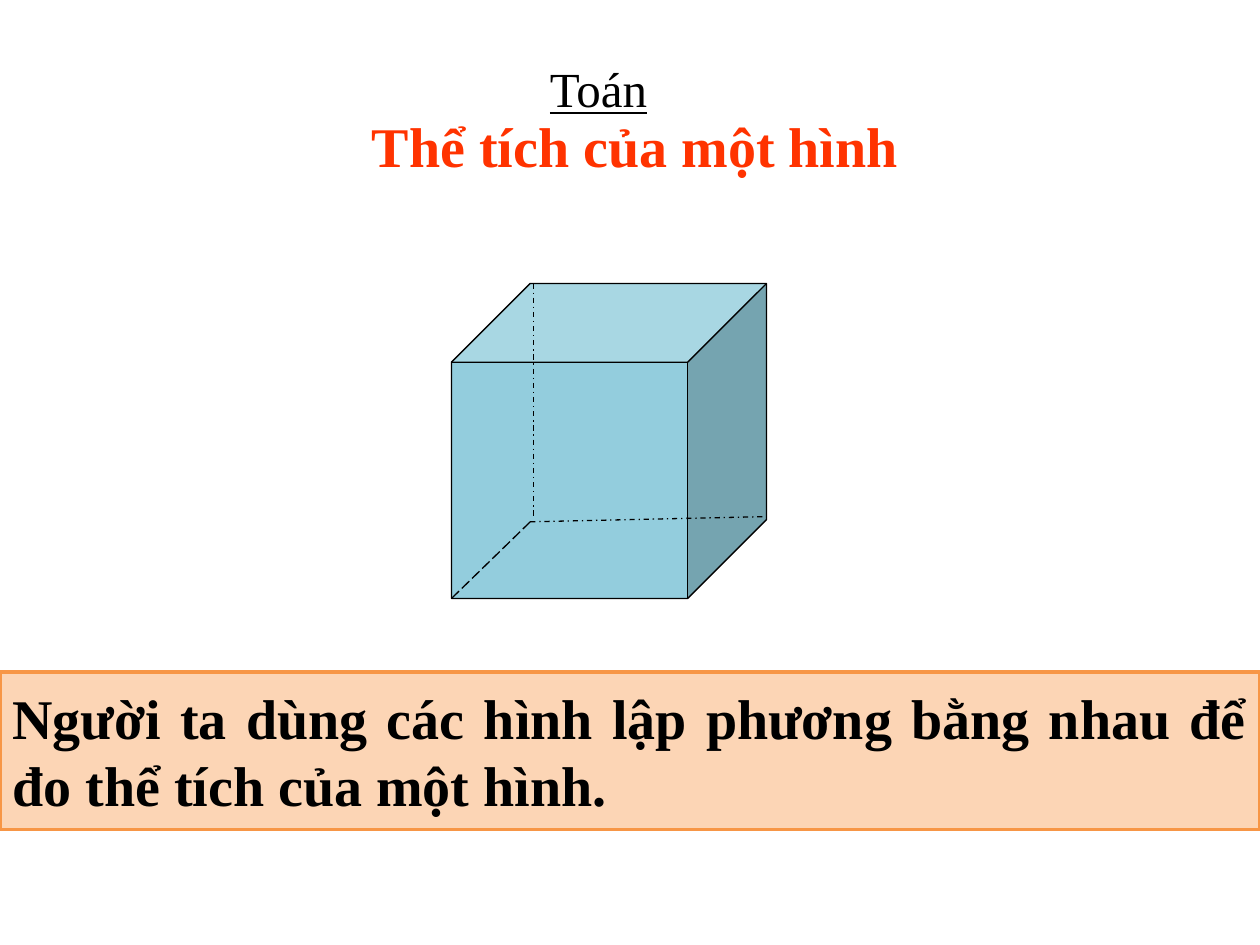
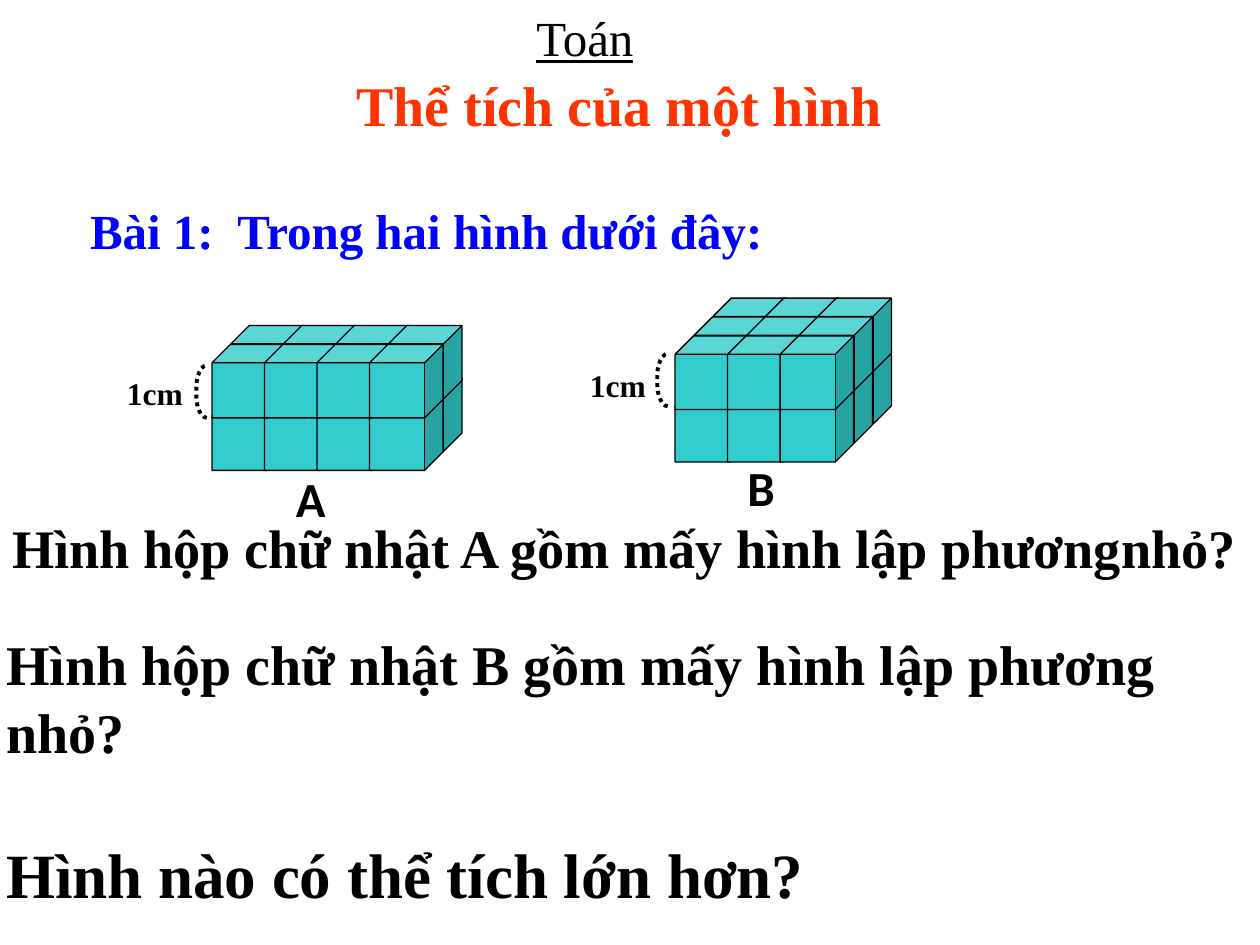
from dataclasses import dataclass
from itertools import product

from lxml import etree
from pptx import Presentation
from pptx.dml.color import RGBColor
from pptx.enum.dml import MSO_LINE
from pptx.enum.shapes import MSO_CONNECTOR, MSO_SHAPE
from pptx.enum.text import MSO_ANCHOR, MSO_AUTO_SIZE, PP_ALIGN
from pptx.oxml.ns import qn
from pptx.shapes.autoshape import Shape
from pptx.slide import Slide
from pptx.text.text import TextFrame
from pptx.util import Inches, Length, Pt

CUBE, BRACKET, RECTANGLE = MSO_SHAPE.CUBE, MSO_SHAPE.LEFT_BRACKET, MSO_SHAPE.RECTANGLE
STRAIGHT = MSO_CONNECTOR.STRAIGHT
DASH_DOT, LONG_DASH, ROUND_DOT = MSO_LINE.DASH_DOT, MSO_LINE.LONG_DASH, MSO_LINE.ROUND_DOT
LEFT, CENTER, JUSTIFY = PP_ALIGN.LEFT, PP_ALIGN.CENTER, PP_ALIGN.JUSTIFY
TOP, MIDDLE = MSO_ANCHOR.TOP, MSO_ANCHOR.MIDDLE
NO_AUTOSIZE = MSO_AUTO_SIZE.NONE

CELLS_PER_INCH = 12
TITLE_ONLY = 5
SERIF, SANS = "Times New Roman", "Calibri"
BLACK, RED, BLUE = "000000", "FF3300", "0000FF"
PALE_BLUE, TEAL = "93CDDD", "33CCCC"
PEACH, ORANGE = "FCD5B5", "F79646"
UNIT_CUBE, UNIT_STEP, DEPTH_STEP = 7, 5, 1.8


@dataclass(frozen=True)
class Area:
    col: float
    row: float
    cols: float
    rows: float


@dataclass(frozen=True)
class Style:
    size: float
    color: str = BLACK
    bold: bool = True
    underline: bool = False
    font: str = SERIF
    align: PP_ALIGN = LEFT


@dataclass(frozen=True)
class Label:
    text: str
    area: Area
    style: Style
    wrap: bool = True


@dataclass(frozen=True)
class HiddenEdge:
    start: tuple[float, float]
    end: tuple[float, float]
    dash: MSO_LINE


@dataclass(frozen=True)
class Block:
    col: float
    row: float
    columns: int
    depth: int
    layers: int = 2


TITLE = Style(32, RED, align=CENTER)
SUBJECT = Style(28, bold=False, underline=True)
EXERCISE = Style(28, BLUE)
UNIT = Style(18)
BLOCK_NAME = Style(28, font=SANS)
RULE = Style(32, align=JUSTIFY)

BACK_CORNER = (50.5, 49.7)
HIDDEN_EDGES = [
    HiddenEdge((50.8, 27), (50.8, 49.4), DASH_DOT),
    HiddenEdge(BACK_CORNER, (43, 57), LONG_DASH),
    HiddenEdge(BACK_CORNER, (73, 49.2), DASH_DOT),
]
BLOCKS = [Block(20.2, 32.8, 4, 2), Block(64.3, 32, 3, 3)]
UNIT_BRACKETS = [Area(18.7, 34.8, 1, 5), Area(62.6, 33.7, 1, 5)]
EXERCISE_LABELS = [
    Label("Bài 1:  Trong hai hình dưới đây:", Area(7.4, 18.5, 67, 6.8), EXERCISE, False),
    Label("1cm", Area(10.9, 35, 7.8, 4.8), UNIT, False),
    Label("1cm", Area(55, 34.3, 7.8, 4.8), UNIT, False),
    Label("A", Area(27, 44, 7, 6.8), BLOCK_NAME),
    Label("B", Area(70, 43, 4, 6.8), BLOCK_NAME),
    Label("Hình hộp chữ nhật A gồm mấy hình lập phươngnhỏ?",
          Area(0, 48.4, 120, 7.4), Style(31)),
    Label("Hình hộp chữ nhật B gồm mấy hình lập phương nhỏ?",
          Area(-0.6, 59.4, 120.6, 14), Style(32)),
    Label("Hình nào có thể tích lớn hơn?", Area(-0.6, 79, 96, 8.5), Style(36)),
]


def grid(cells: float) -> Length:
    return Inches(cells / CELLS_PER_INCH)


def box(area: Area) -> tuple[Length, ...]:
    return grid(area.col), grid(area.row), grid(area.cols), grid(area.rows)


def rgb(color: str) -> RGBColor:
    return RGBColor.from_string(color)


def write(frame: TextFrame, text: str, style: Style,
          anchor: MSO_ANCHOR = TOP, wrap: bool = True) -> None:
    frame.word_wrap = wrap
    frame.auto_size = NO_AUTOSIZE
    frame.vertical_anchor = anchor
    frame.text = text
    paragraph = frame.paragraphs[0]
    paragraph.alignment = style.align
    font = paragraph.runs[0].font
    font.name, font.size = style.font, Pt(style.size)
    font.bold, font.underline = style.bold, style.underline
    font.color.rgb = rgb(style.color)


def add_label(slide: Slide, label: Label) -> None:
    frame = slide.shapes.add_textbox(*box(label.area)).text_frame
    write(frame, label.text, label.style, wrap=label.wrap)


def add_figure(slide: Slide, kind: MSO_SHAPE, area: Area, fill: str | None = None,
               line: str = BLACK, weight: float = 0.75) -> Shape:
    figure = slide.shapes.add_shape(kind, *box(area))
    figure.shadow.inherit = False
    if fill:
        figure.fill.solid()
        figure.fill.fore_color.rgb = rgb(fill)
    else:
        figure.fill.background()
    figure.line.color.rgb = rgb(line)
    figure.line.width = Pt(weight)
    return figure


def add_hidden_edge(slide: Slide, edge: HiddenEdge) -> None:
    ends = [grid(value) for value in (*edge.start, *edge.end)]
    connector = slide.shapes.add_connector(STRAIGHT, *ends)
    connector.line.color.rgb = rgb(BLACK)
    connector.line.width = Pt(0.75)
    connector.line.dash_style = edge.dash
    etree.SubElement(connector._element.spPr, qn("a:effectLst"))


def add_block(slide: Slide, block: Block) -> None:
    for layer, back, column in product(reversed(range(block.layers)),
                                       reversed(range(block.depth)),
                                       range(block.columns)):
        col = block.col + column * UNIT_STEP + back * DEPTH_STEP
        row = block.row + layer * UNIT_STEP - back * DEPTH_STEP
        add_figure(slide, CUBE, Area(col, row, UNIT_CUBE, UNIT_CUBE), TEAL)


def add_lesson_slide(deck: Presentation, title_at: tuple[float, float],
                     subject_at: tuple[float, float]) -> Slide:
    slide = deck.slides.add_slide(deck.slide_layouts[TITLE_ONLY])
    title = slide.shapes.title
    title.left, title.top, title.width, title.height = box(Area(*title_at, 59, 7.7))
    write(title.text_frame, "Thể tích của một hình", TITLE)
    add_label(slide, Label("Toán", Area(*subject_at, 15, 6.8), SUBJECT))
    return slide


def build_definition(deck: Presentation) -> None:
    slide = add_lesson_slide(deck, (31, 10), (51.2, 5))
    add_figure(slide, CUBE, Area(43, 27, 30, 30), PALE_BLUE)
    for edge in HIDDEN_EDGES:
        add_hidden_edge(slide, edge)
    rule = add_figure(slide, RECTANGLE, Area(0, 64, 120, 15), PEACH, ORANGE, 2)
    write(rule.text_frame,
          "Người ta dùng các hình lập phương bằng nhau để đo thể tích của một hình.",
          RULE, MIDDLE)


def build_exercise(deck: Presentation) -> None:
    slide = add_lesson_slide(deck, (29.5, 6.1), (49.9, 0.1))
    for block in BLOCKS:
        add_block(slide, block)
    for area in UNIT_BRACKETS:
        bracket = add_figure(slide, BRACKET, area, weight=2.25)
        bracket.adjustments[0] = 2.15
        bracket.line.dash_style = ROUND_DOT
    for label in EXERCISE_LABELS:
        add_label(slide, label)


def main() -> None:
    deck = Presentation()
    deck.slide_width, deck.slide_height = grid(120), grid(90)
    build_definition(deck)
    build_exercise(deck)
    deck.save("out.pptx")


if __name__ == "__main__":
    main()
